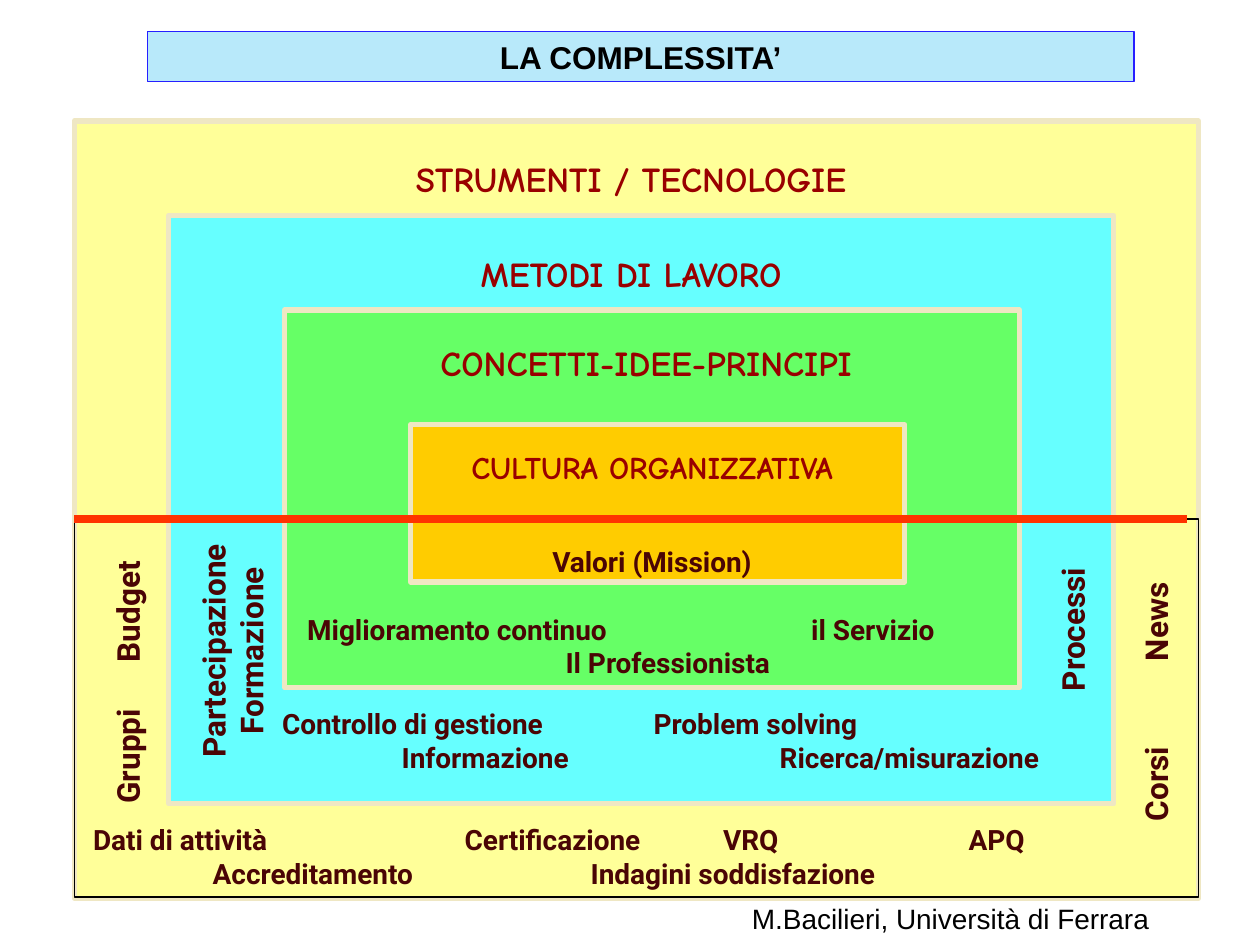
from lxml.etree import SubElement
from pptx import Presentation
from pptx.dml.color import RGBColor
from pptx.enum.shapes import MSO_CONNECTOR, MSO_SHAPE
from pptx.enum.text import MSO_ANCHOR, MSO_AUTO_SIZE, PP_ALIGN
from pptx.oxml.ns import qn
from pptx.util import Inches, Pt


def color(value):
    return RGBColor.from_string(value)


def add_label(box, lines, size, font, ink, tabs=(), rotation=0, bold=True):
    label = slide.shapes.add_textbox(*map(Inches, box))
    label.rotation = rotation
    frame = label.text_frame
    frame.vertical_anchor = MSO_ANCHOR.MIDDLE
    frame.word_wrap = bool(tabs)
    if tabs:
        frame.margin_right = 0
    frame.text = "\n".join(lines)
    for number, paragraph in enumerate(frame.paragraphs):
        paragraph.alignment = PP_ALIGN.LEFT if tabs else PP_ALIGN.CENTER
        if tabs:
            stops = SubElement(paragraph._p.get_or_add_pPr(), qn("a:tabLst"))
            for stop in tabs[number]:
                SubElement(stops, qn("a:tab"), pos=str(Inches(stop)), algn="l")
        paragraph.font.size = Pt(size)
        paragraph.font.name = font
        paragraph.font.bold = bold
        paragraph.font.color.rgb = color(ink)


prs = Presentation()
prs.slide_width, prs.slide_height = Inches(10), Inches(7.5)
slide = prs.slides.add_slide(prs.slide_layouts[5])

title = slide.shapes.title
title.left, title.top, title.width, title.height = map(Inches, (1.17, 0.25, 7.83, 0.4))
title.fill.solid()
title.fill.fore_color.rgb = color("B8E9FA")
title.line.color.rgb = color("261FFF")
title.line.width = Pt(0.75)
title.text_frame.text = "LA COMPLESSITA’"
title.text_frame.auto_size = MSO_AUTO_SIZE.NONE
title.text_frame.vertical_anchor = MSO_ANCHOR.MIDDLE
heading = title.text_frame.paragraphs[0]
heading.alignment = PP_ALIGN.CENTER
heading.font.size = Pt(18)
heading.font.name = "Arial"
heading.font.bold = True
heading.font.color.rgb = color("000000")

layers = [
    ((0.59, 0.96, 8.92, 6.17), "FFFF99", "EFE7C3", 3),
    ((0.59, 4.12, 8.92, 3), None, "000000", 0.75),
    ((1.34, 1.71, 7.5, 4.67), "66FFFF", "EFE7C3", 3),
    ((2.26, 2.46, 5.83, 3), "66FF66", "EFE7C3", 3),
    ((3.26, 3.37, 3.92, 1.25), "FFCC00", "EFE7C3", 3),
]
for box, fill, edge, weight in layers:
    layer = slide.shapes.add_shape(MSO_SHAPE.RECTANGLE, *map(Inches, box))
    layer.shadow.inherit = False
    if fill:
        layer.fill.solid()
        layer.fill.fore_color.rgb = color(fill)
    else:
        layer.fill.background()
    layer.line.color.rgb = color(edge)
    layer.line.width = Pt(weight)

layer_names = [
    ((3.01, 1.21, 4, 0.42), "STRUMENTI / TECNOLOGIE", 20),
    ((3.26, 1.96, 3.5, 0.42), "METODI DI LAVORO", 20),
    ((3.13, 2.71, 4, 0.33), "CONCETTI-IDEE-PRINCIPI", 20),
    ((3.26, 3.37, 3.83, 0.67), "CULTURA ORGANIZZATIVA", 18),
]
for box, name, size in layer_names:
    add_label(box, [name], size, "Comic Neue", "990000")

examples = [
    ((3.76, 4.12, 2.83, 0.67), ["Valori (Mission)"], ()),
    ((2.34, 4.79, 5.67, 0.67),
     ["Miglioramento continuo\til Servizio", "\tIl Professionista"],
     [[4], [2.05]]),
    ((2.14, 5.54, 6.67, 0.67),
     ["Controllo di gestione\tProblem solving", "\tInformazione\tRicerca/misurazione"],
     [[2.95], [0.95, 3.95]]),
    ((0.64, 6.46, 8.33, 0.67),
     ["Dati di attività\tCertificazione\tVRQ\tAPQ", "\tAccreditamento\tIndagini soddisfazione"],
     [[2.95, 5, 6.95], [0.95, 3.95]]),
]
for box, lines, tabs in examples:
    add_label(box, lines, 16, "Roboto", "4A0505", tabs)

side_examples = [
    ((-0.03, 5.27, 2.08, 0.33), ["Gruppi\tBudget"], [[1.12]]),
    ((8.13, 5.41, 2.08, 0.33), ["Corsi\tNews"], [[1.27]]),
    ((7.47, 4.83, 2.08, 0.33), ["Processi"], ()),
    ((0.8, 4.83, 2.08, 0.67), ["Partecipazione", "Formazione"], ()),
]
for box, lines, tabs in side_examples:
    add_label(box, lines, 18, "Roboto", "4A0505", tabs, rotation=270)

waterline = slide.shapes.add_connector(
    MSO_CONNECTOR.STRAIGHT, Inches(0.59), Inches(4.12), Inches(9.42), Inches(4.12))
waterline.line.color.rgb = color("FF3300")
waterline.line.width = Pt(4.5)
SubElement(waterline._element.spPr, qn("a:effectLst"))

add_label((5.87, 7.1, 4.13, 0.37), ["M.Bacilieri, Università di Ferrara"],
          16, "Arial", "000000", tabs=[[]], bold=False)

prs.save("out.pptx")
